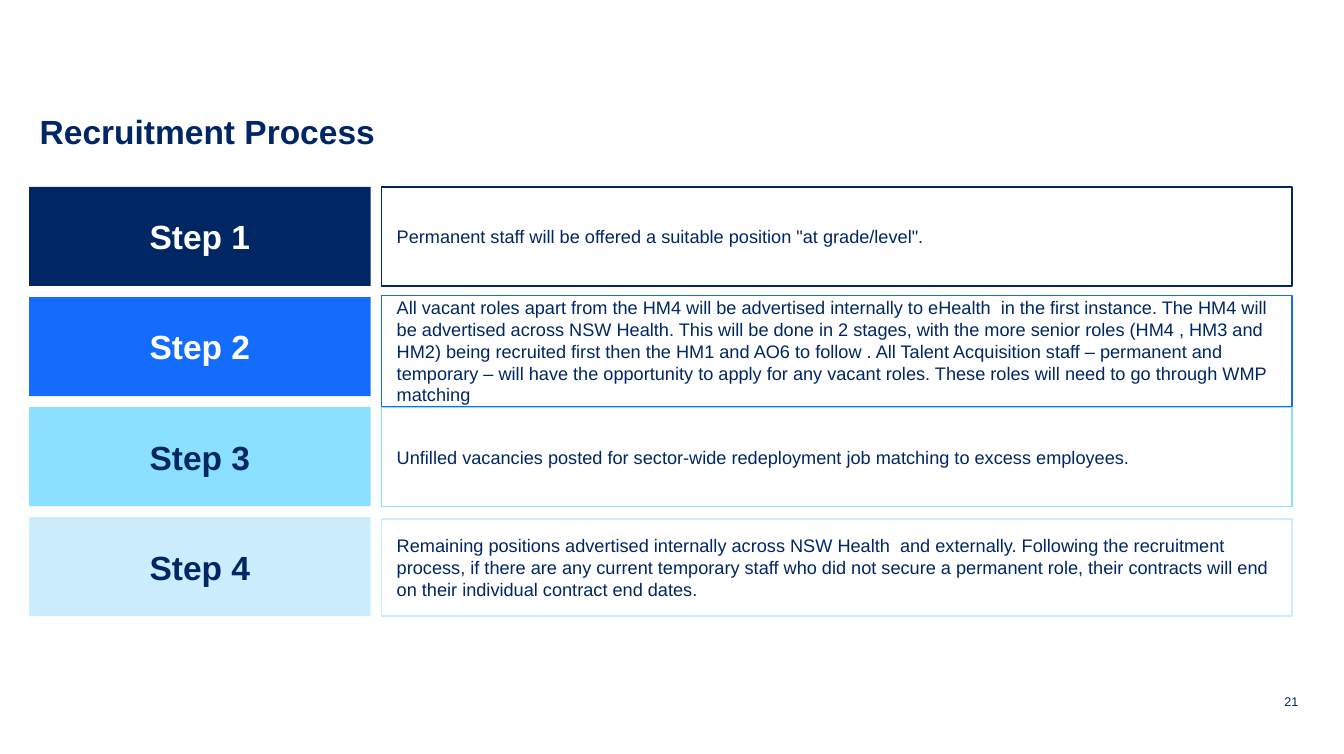
from pptx import Presentation
from pptx.dml.color import RGBColor
from pptx.enum.shapes import MSO_SHAPE
from pptx.enum.text import MSO_ANCHOR, PP_ALIGN
from pptx.util import Inches, Pt

RECTANGLE = MSO_SHAPE.RECTANGLE
TOP, MIDDLE = MSO_ANCHOR.TOP, MSO_ANCHOR.MIDDLE
LEFT, CENTER, RIGHT = PP_ALIGN.LEFT, PP_ALIGN.CENTER, PP_ALIGN.RIGHT
TITLE_ONLY = 5

COLORS = {
    "navy": "002664",
    "blue": "146CFD",
    "sky": "8CE0FF",
    "pale": "CBEDFD",
    "white": "FFFFFF",
}

# Grid of four rows: a step label and its detail box, in inches
LABEL_LEFT, LABEL_WIDTH = 0.58, 6.79
DETAIL_LEFT, DETAIL_WIDTH = 7.59, 18.11
FIRST_ROW, ROW_PITCH, ROW_HEIGHT = 3.72, 2.19, 1.97

# Fill colour, label colour, detail offset from the row, detail height, detail
STEPS = [
    ("navy", "white", 0, 1.97,
     'Permanent staff will be offered a suitable position "at grade/level".'),
    ("blue", "white", -0.03, 2.21,
     "All vacant roles apart from the HM4 will be advertised internally to "
     "eHealth  in the first instance. The HM4 will be advertised across NSW "
     "Health. This will be done in 2 stages, with the more senior roles "
     "(HM4 , HM3 and HM2) being recruited first then the HM1 and AO6 to "
     "follow . All Talent Acquisition staff – permanent and temporary – will "
     "have the opportunity to apply for any vacant roles. These roles will "
     "need to go through WMP matching"),
    ("sky", "navy", 0.01, 1.97,
     "Unfilled vacancies posted for sector-wide redeployment job matching to "
     "excess employees."),
    ("pale", "navy", 0.03, 1.93,
     "Remaining positions advertised internally across NSW Health  and "
     "externally. Following the recruitment process, if there are any current "
     "temporary staff who did not secure a permanent role, their contracts "
     "will end on their individual contract end dates."),
]


def write(box, text, size, color, align=LEFT, bold=False, anchor=MIDDLE):
    frame = box.text_frame
    frame.word_wrap = True
    frame.vertical_anchor = anchor
    para = frame.paragraphs[0]
    para.alignment = align
    span = para.add_run()
    span.text = text
    span.font.name = "Arial"
    span.font.size = Pt(size)
    span.font.bold = bold
    span.font.color.rgb = RGBColor.from_string(COLORS[color])
    return frame


def add_box(left, top, width, height):
    box = page.shapes.add_shape(
        RECTANGLE, Inches(left), Inches(top), Inches(width), Inches(height))
    box.shadow.inherit = False
    return box


deck = Presentation()
deck.slide_width, deck.slide_height = Inches(26.73), Inches(15)
page = deck.slides.add_slide(deck.slide_layouts[TITLE_ONLY])

title = page.shapes.title
title.left, title.top = Inches(0.79), Inches(2.3)
title.width, title.height = Inches(25.13), Inches(0.59)
frame = write(title, "Recruitment Process", 48, "navy", bold=True, anchor=TOP)
frame.margin_left = frame.margin_right = 0
frame.margin_top = frame.margin_bottom = 0
frame.paragraphs[0].line_spacing = 0.9

for row, (color, label_color, offset, height, detail) in enumerate(STEPS):
    top = FIRST_ROW + row * ROW_PITCH
    rgb = RGBColor.from_string(COLORS[color])

    label_box = add_box(LABEL_LEFT, top, LABEL_WIDTH, ROW_HEIGHT)
    label_box.fill.solid()
    label_box.fill.fore_color.rgb = rgb
    label_box.line.fill.background()
    write(label_box, f"Step {row + 1}", 48, label_color, CENTER, bold=True)

    detail_box = add_box(DETAIL_LEFT, top + offset, DETAIL_WIDTH, height)
    detail_box.fill.background()
    detail_box.line.color.rgb = rgb
    detail_box.line.width = Pt(2.25)
    frame = write(detail_box, detail, 26, "navy")
    frame.margin_left = Inches(0.3)

number_box = page.shapes.add_textbox(
    Inches(24.8), Inches(13.76), Inches(1.12), Inches(0.4))
write(number_box, "21", 18, "navy", RIGHT)

deck.save("out.pptx")
